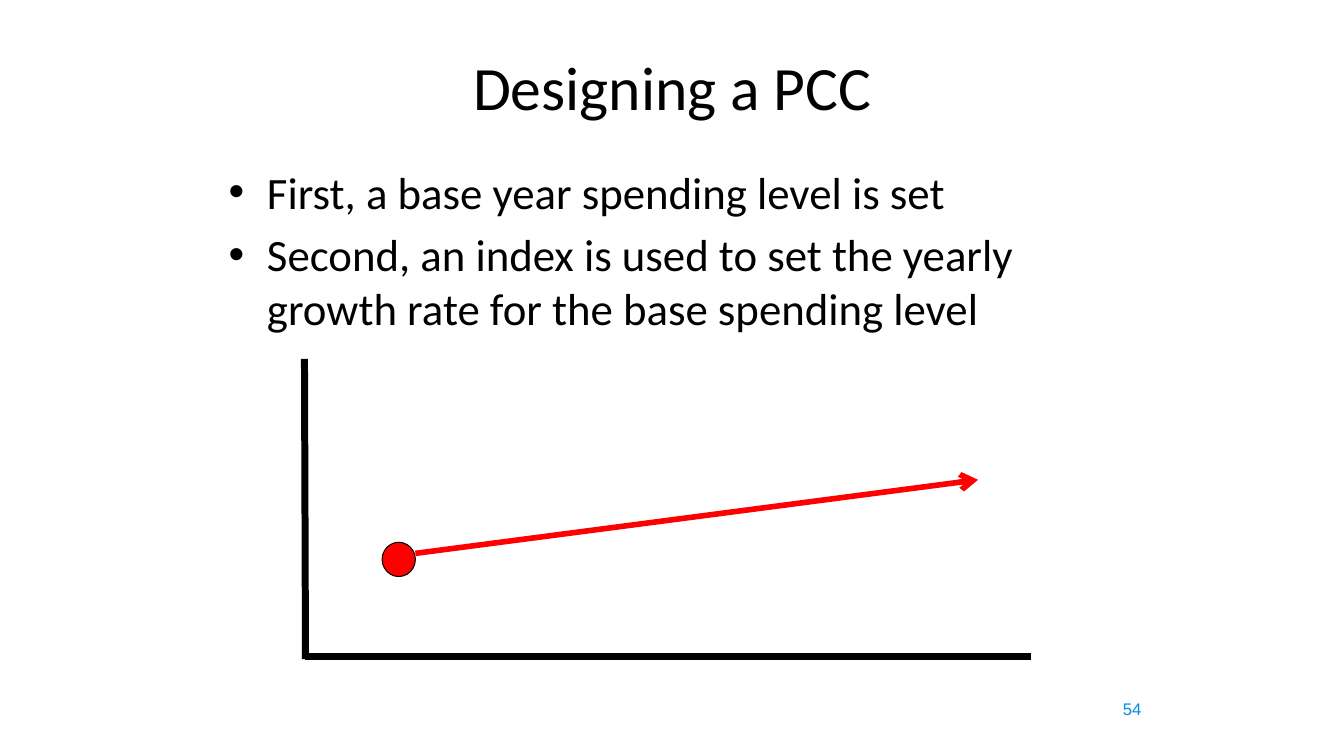
from lxml.etree import SubElement
from pptx import Presentation
from pptx.dml.color import RGBColor
from pptx.enum.shapes import MSO_CONNECTOR as CONNECTOR, MSO_SHAPE as SHAPE
from pptx.enum.text import MSO_ANCHOR as ANCHOR, PP_ALIGN as ALIGN
from pptx.oxml.ns import qn
from pptx.util import Emu, Pt

PX = 9144  # EMU per px: 100 px to the inch
BLACK = RGBColor(0x00, 0x00, 0x00)
RED = RGBColor(0xFF, 0x00, 0x00)
BLUE = RGBColor(0x00, 0x90, 0xE0)

POINTS = [
    "First, a base year spending level is set",
    "Second, an index is used to set the yearly growth rate for the base spending level",
]


def px(*lengths):
    return [Emu(length * PX) for length in lengths]


def add_text(slide, box, lines, size, font="Calibri", color=BLACK,
             align=ALIGN.LEFT, anchor=ANCHOR.MIDDLE):
    frame = slide.shapes.add_textbox(*px(*box)).text_frame
    frame.word_wrap = True
    frame.vertical_anchor = anchor
    frame.text = "\n".join(lines)
    for paragraph in frame.paragraphs:
        paragraph.alignment = align
        paragraph.font.size = Pt(size)
        paragraph.font.name = font
        paragraph.font.color.rgb = color
    return frame


def add_bullets(slide, box, lines, size, indent):
    frame = add_text(slide, box, lines, size, anchor=ANCHOR.TOP)
    for paragraph in frame.paragraphs:
        paragraph.space_before = Pt(size * 0.2)
        properties = paragraph._p.get_or_add_pPr()
        properties.set("marL", str(indent * PX))
        properties.set("indent", str(-indent * PX))
        bullet_font = properties.makeelement(qn("a:buFont"), {"typeface": "Arial"})
        bullet = properties.makeelement(qn("a:buChar"), {"char": "•"})
        # Bullet settings come after spacing and before the default run font
        default_run = properties.find(qn("a:defRPr"))
        default_run.addprevious(bullet_font)
        default_run.addprevious(bullet)


def add_line(slide, start, end, color, width, arrow=False):
    line = slide.shapes.add_connector(CONNECTOR.STRAIGHT, *px(*start, *end))
    line.line.color.rgb = color
    line.line.width = Pt(width)
    if arrow:
        SubElement(line.line._get_or_add_ln(), qn("a:tailEnd"), type="arrow")
    SubElement(line._element.spPr, qn("a:effectLst"))


def add_dot(slide, box, color):
    dot = slide.shapes.add_shape(SHAPE.OVAL, *px(*box))
    dot.shadow.inherit = False
    dot.fill.solid()
    dot.fill.fore_color.rgb = color
    dot.line.color.rgb = BLACK
    dot.line.width = Pt(0.75)


def main():
    deck = Presentation()
    deck.slide_width, deck.slide_height = px(1333, 750)
    slide = deck.slides.add_slide(deck.slide_layouts[6])

    # Title, slide number and bullets
    add_text(slide, (217, 30, 900, 110), ["Designing a PCC"], 44, align=ALIGN.CENTER)
    add_text(slide, (1075, 683, 67, 40), ["54"], 12, "Arial", BLUE, ALIGN.RIGHT)
    add_bullets(slide, (217, 158, 900, 512), POINTS, 32, indent=38)

    # Axes of the sketch
    add_line(slide, (302, 356), (303, 654), BLACK, 5)
    add_line(slide, (303, 651), (1023, 651), BLACK, 5)

    # Base year level and its growth
    add_dot(slide, (379, 538, 33, 34), RED)
    add_line(slide, (412, 549), (970, 476), RED, 4, arrow=True)

    deck.save("out.pptx")


if __name__ == "__main__":
    main()
